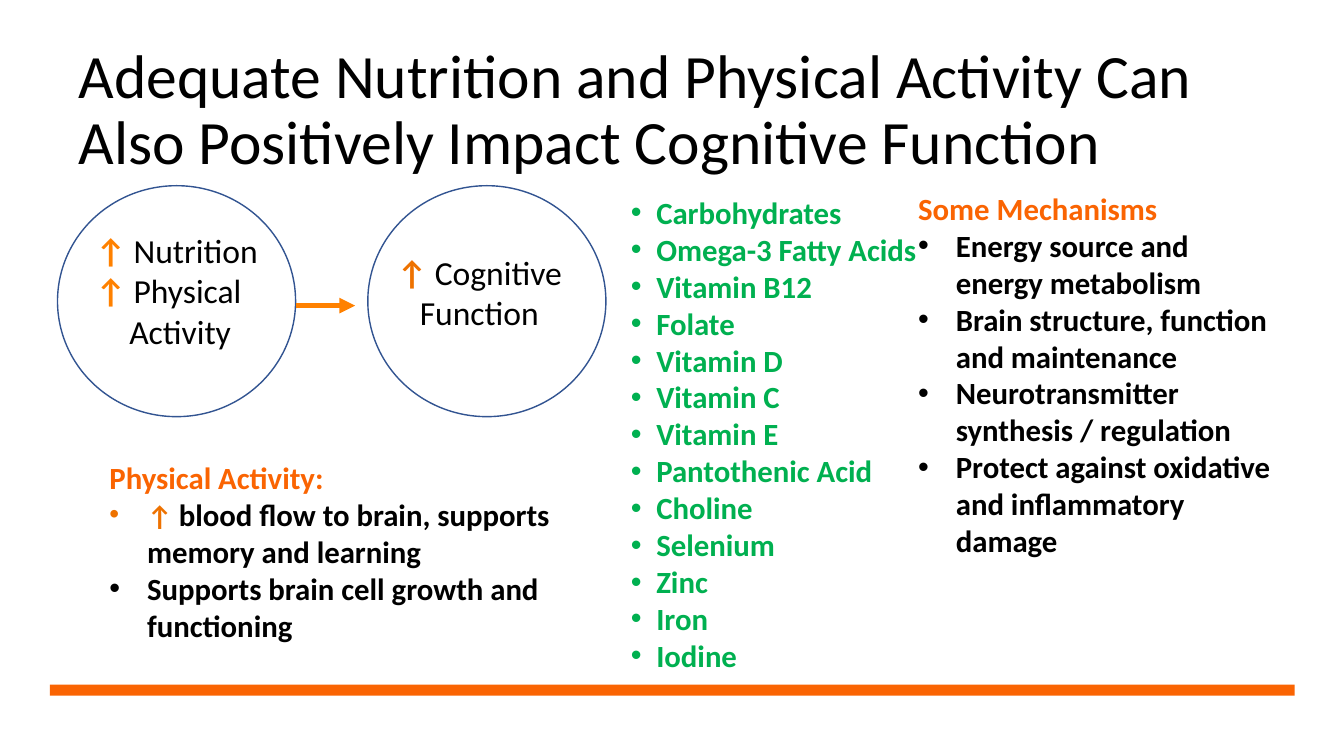
from lxml import etree
from pptx import Presentation
from pptx import util as u
from pptx.dml.color import RGBColor
from pptx.enum import shapes, text
from pptx.oxml.ns import qn

BLACK, ORANGE, GREEN = "000000", "FA6402", "00B050"
ARROW, CONNECTOR, OUTLINE = "EE7200", "FF8100", "325491"


def rgb(value):
    return RGBColor.from_string(value)


def add_text(box, paragraphs, anchor=text.MSO_ANCHOR.TOP):
    """Each paragraph is (format, runs); each run is (words, size, colour, bold)."""
    tf = s.shapes.add_textbox(*map(u.Cm, box)).text_frame
    tf.word_wrap = True
    tf.vertical_anchor = anchor
    for i, (fmt, runs) in enumerate(paragraphs):
        p = tf.paragraphs[0] if i == 0 else tf.add_paragraph()
        pPr = p._p.get_or_add_pPr()
        if "indent" in fmt:
            pPr.set("marL", str(u.Cm(fmt["indent"])))
            pPr.set("indent", str(-u.Cm(fmt["indent"])))
        if "bullet" in fmt:
            etree.SubElement(pPr, qn("a:buFont")).set("typeface", "Arial")
            etree.SubElement(pPr, qn("a:buChar")).set("char", fmt["bullet"])
        for name in ("alignment", "line_spacing"):
            if name in fmt:
                setattr(p, name, fmt[name])
        for words, size, colour, bold in runs:
            r = p.add_run()
            r.text = words
            font = {"name": "Calibri", "size": u.Pt(size), "bold": bold}
            for name, value in font.items():
                setattr(r.font, name, value)
            r.font.color.rgb = rgb(colour)


prs = Presentation()
prs.slide_width, prs.slide_height = u.Cm(33.87), u.Cm(19.05)
s = prs.slides.add_slide(prs.slide_layouts[6])

# Bottom bar
bar = s.shapes.add_shape(shapes.MSO_SHAPE.RECTANGLE,
                         u.Cm(1.26), u.Cm(17.25), u.Cm(31.37), u.Cm(0.28))
bar.shadow.inherit = False
bar.fill.solid()
bar.fill.fore_color.rgb = rgb(ORANGE)
bar.line.fill.background()

# Title
add_text((1.73, 0.97, 30.81, 3.68),
         [({"line_spacing": 0.9},
           [("Adequate Nutrition and Physical Activity Can Also Positively "
             "Impact Cognitive Function", 44, BLACK, False)])],
         text.MSO_ANCHOR.MIDDLE)

# Cause and effect circles
for left in (1.45, 9.27):
    sp = s.shapes.add_shape(shapes.MSO_SHAPE.OVAL,
                            u.Cm(left), u.Cm(4.68), u.Cm(6), u.Cm(5.82))
    sp.shadow.inherit = False
    sp.fill.background()
    sp.line.color.rgb = rgb(OUTLINE)
    sp.line.width = u.Pt(1)

# Arrow between the circles
arrow = s.shapes.add_connector(shapes.MSO_CONNECTOR.STRAIGHT,
                               u.Cm(7.47), u.Cm(7.7), u.Cm(8.95), u.Cm(7.7))
arrow.line.color.rgb = rgb(CONNECTOR)
arrow.line.width = u.Pt(3.75)
etree.SubElement(arrow.line._get_or_add_ln(), qn("a:tailEnd")).set("type", "triangle")
etree.SubElement(arrow._element.spPr, qn("a:effectLst"))

# Circle labels
add_text((2.16, 5.67, 5.82, 3.35),
         [({"indent": 0.85}, [("↑ ", 24, CONNECTOR, True), (label, 24, BLACK, False)])
          for label in ("Nutrition", "Physical Activity")])
add_text((9.35, 6.22, 5.46, 2.31),
         [({"alignment": text.PP_ALIGN.CENTER},
           [("↑ ", 24, ARROW, True), ("Cognitive Function", 24, BLACK, False)])])

# Physical activity
wide = {"indent": 0.95, "bullet": "•"}
add_text((2.51, 11.43, 12.9, 4.95), [
    ({}, [("Physical Activity:", 22, ORANGE, True)]),
    (wide, [("↑ ", 20, ARROW, True),
            ("blood flow to brain, supports memory and learning", 22, BLACK, True)]),
    (wide, [("Supports brain cell growth and functioning", 22, BLACK, True)]),
])

# Nutrients
nutrients = ["Carbohydrates", "Omega-3 Fatty Acids", "Vitamin B12", "Folate",
             "Vitamin D", "Vitamin C", "Vitamin E", "Pantothenic Acid",
             "Choline", "Selenium", "Zinc", "Iron", "Iodine"]
add_text((15.65, 4.75, 10.13, 8.38),
         [({"indent": 0.64, "bullet": "•"}, [(nutrient, 22, GREEN, True)])
          for nutrient in nutrients])

# Mechanisms
mechanisms = ["Energy source and energy metabolism",
              "Brain structure, function and maintenance",
              "Neurotransmitter synthesis / regulation",
              "Protect against oxidative and inflammatory damage"]
add_text((22.89, 4.65, 9.65, 10.52),
         [({}, [("Some Mechanisms", 22, ORANGE, True)])]
         + [(wide, [(mechanism, 22, BLACK, True)]) for mechanism in mechanisms])

prs.save("out.pptx")
